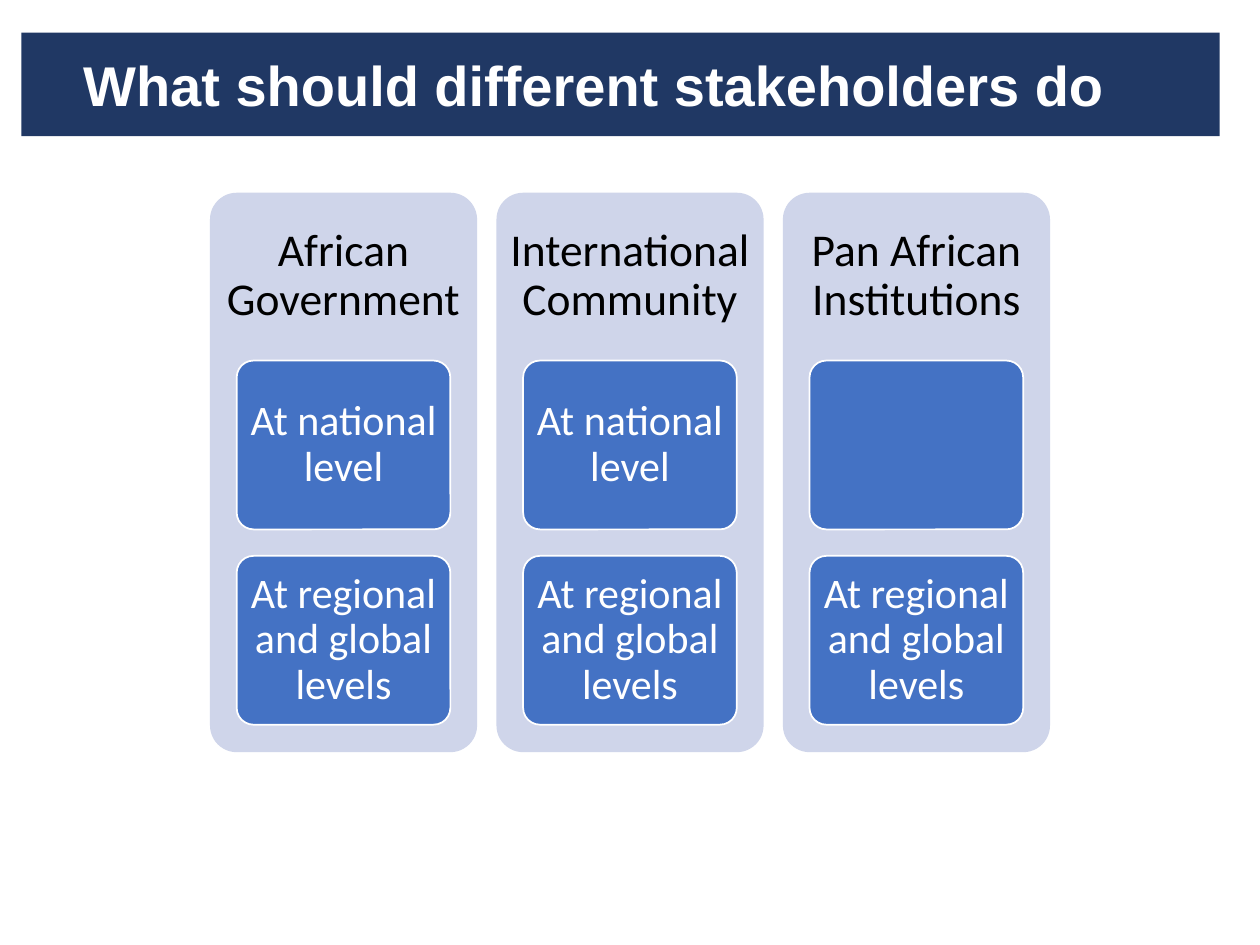
from pptx import Presentation
from pptx.dml.color import RGBColor
from pptx.enum.shapes import MSO_SHAPE as Preset
from pptx.enum.text import MSO_ANCHOR as Anchor, MSO_AUTO_SIZE as AutoSize, PP_ALIGN as Align
from pptx.oxml import parse_xml
from pptx.oxml.ns import nsdecls
from pptx.util import Inches, Pt

NAVY = RGBColor(0x20, 0x38, 0x64)
PALE = RGBColor(0xCF, 0xD5, 0xEA)
BLUE = RGBColor(0x44, 0x72, 0xC4)
WHITE = RGBColor(0xFF, 0xFF, 0xFF)
BLACK = RGBColor(0x00, 0x00, 0x00)

SLIDE_WIDTH, SLIDE_HEIGHT = 10, 7.5
DIAGRAM_WIDTH, DIAGRAM_HEIGHT = SLIDE_WIDTH * 2 / 3, 4.44
DIAGRAM_LEFT, DIAGRAM_TOP = SLIDE_WIDTH / 6, 1.53
COLUMN_WIDTH = 2.12
HEADING_HEIGHT = DIAGRAM_HEIGHT * 0.3
CELL_WIDTH, CELL_HEIGHT = COLUMN_WIDTH * 0.8, 1.34
ROW_PITCH = 1.55

NATIONAL = "At national level"
REGIONAL = "At regional and global levels"
STAKEHOLDERS = [
    ("African Government", [NATIONAL, REGIONAL]),
    ("International Community", [NATIONAL, REGIONAL]),
    ("Pan African Institutions", ["", REGIONAL]),
]


class StakeholderSlide:
    def __init__(self, presentation):
        self.slide = presentation.slides.add_slide(presentation.slide_layouts[5])
        self.shapes = self.slide.shapes

    def label(self, shape, text, size, color, font="Calibri", align=Align.CENTER,
              spacing=0.9, inset=(0.11, 0.11), bold=False):
        frame = shape.text_frame
        frame.word_wrap = True
        frame.auto_size = AutoSize.NONE
        frame.vertical_anchor = Anchor.MIDDLE
        frame.margin_left = frame.margin_right = Inches(inset[0])
        frame.margin_top = frame.margin_bottom = Inches(inset[1])
        paragraph = frame.paragraphs[0]
        paragraph.alignment = align
        paragraph.line_spacing = spacing
        run = paragraph.add_run()
        run.text = text
        run.font.name, run.font.size, run.font.bold = font, Pt(size), bold
        run.font.color.rgb = color
        return paragraph

    def title(self, text):
        title = self.shapes.title
        title.left, title.top = Inches(0.17), Inches(0.26)
        title.width, title.height = Inches(9.51), Inches(0.82)
        title._element.spPr.append(parse_xml(
            f'<a:prstGeom {nsdecls("a")} prst="roundRect"><a:avLst/></a:prstGeom>'))
        title.fill.solid()
        title.fill.fore_color.rgb = NAVY
        paragraph = self.label(title, text, 32, WHITE, font="Arial", align=Align.LEFT,
                               spacing=1.0, inset=(0.1, 0.1), bold=True)
        properties = paragraph._p.get_or_add_pPr()
        properties.set("marL", str(Inches(0.39)))
        properties.set("indent", "0")

    def rounded(self, left, top, width, height, fill, line=None):
        shape = self.shapes.add_shape(Preset.ROUNDED_RECTANGLE, Inches(left), Inches(top),
                                      Inches(width), Inches(height))
        shape.adjustments[0] = 0.1
        shape.shadow.inherit = False
        shape.fill.solid()
        shape.fill.fore_color.rgb = fill
        if line is None:
            shape.line.fill.background()
        else:
            shape.line.color.rgb = line
            shape.line.width = Pt(1)
        return shape

    def column(self, index, heading, levels):
        pitch = (DIAGRAM_WIDTH - COLUMN_WIDTH) / (len(STAKEHOLDERS) - 1)
        left = DIAGRAM_LEFT + index * pitch
        self.rounded(left, DIAGRAM_TOP, COLUMN_WIDTH, DIAGRAM_HEIGHT, PALE)
        box = self.shapes.add_textbox(Inches(left), Inches(DIAGRAM_TOP),
                                      Inches(COLUMN_WIDTH), Inches(HEADING_HEIGHT))
        self.label(box, heading, 26, BLACK)
        for row, level in enumerate(levels):
            cell = self.rounded(left + (COLUMN_WIDTH - CELL_WIDTH) / 2,
                                DIAGRAM_TOP + HEADING_HEIGHT + row * ROW_PITCH,
                                CELL_WIDTH, CELL_HEIGHT, BLUE, WHITE)
            if level:
                self.label(cell, level, 24, WHITE, inset=(0.07, 0.05))


def main():
    presentation = Presentation()
    presentation.slide_width = Inches(SLIDE_WIDTH)
    presentation.slide_height = Inches(SLIDE_HEIGHT)
    slide = StakeholderSlide(presentation)
    slide.title("What should different stakeholders do")
    for index, (heading, levels) in enumerate(STAKEHOLDERS):
        slide.column(index, heading, levels)
    presentation.save("out.pptx")


if __name__ == "__main__":
    main()
